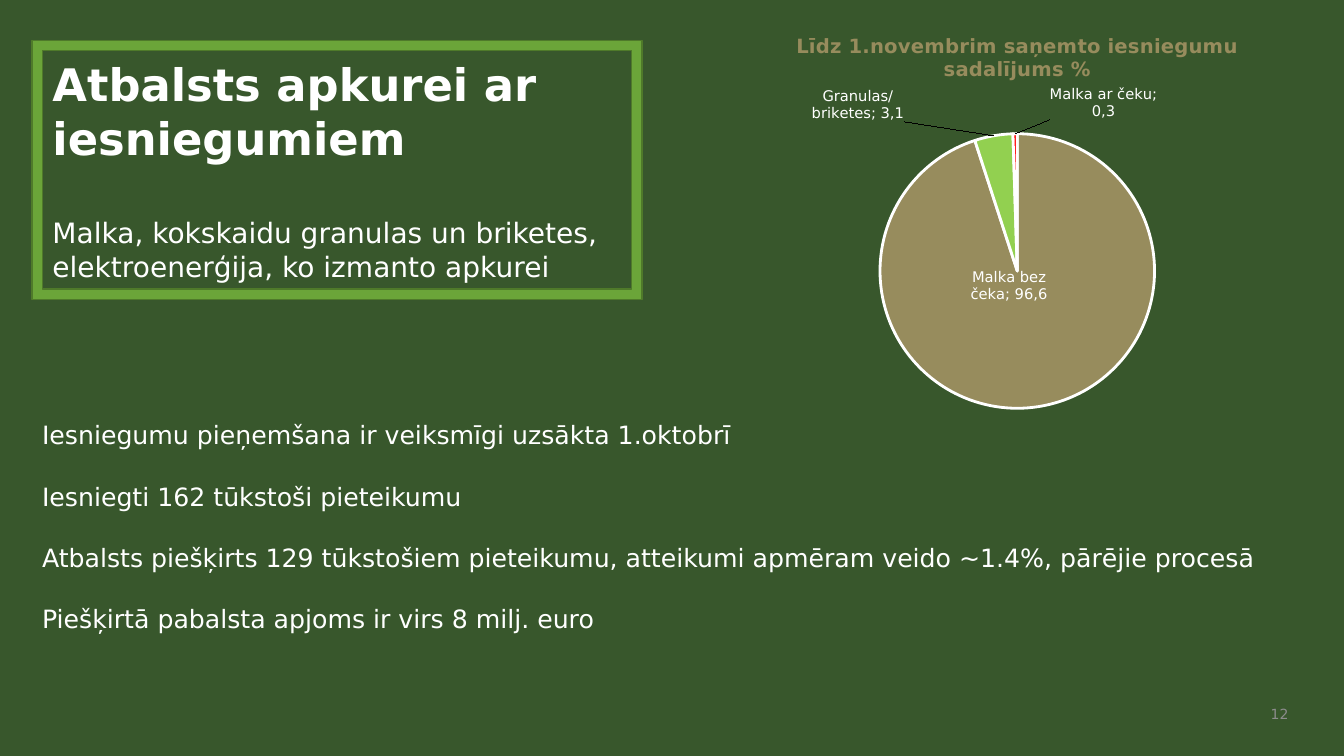
"""Build the heating support slide with its pie chart of applications."""
from lxml import etree
from pptx import Presentation
from pptx import util as u
from pptx.chart import data as cd
from pptx.dml.color import RGBColor
from pptx.enum import chart as ce, shapes, text

GREEN = RGBColor(0x38, 0x57, 0x2C)
FRAME = RGBColor(0x6B, 0xA5, 0x39)
EDGE = RGBColor(0x4F, 0x7A, 0x2A)
TAN = RGBColor(0x97, 0x8C, 0x5D)
LIME = RGBColor(0x92, 0xD0, 0x50)
RED = RGBColor(0xFF, 0, 0)
WHITE = RGBColor(0xFF, 0xFF, 0xFF)
GREY = RGBColor(0x8C, 0x8C, 0x8C)
C = "http://schemas.openxmlformats.org/drawingml/2006/chart"


def add_text(p, words, size, color, bold=False):
    r = p.add_run()
    r.text = words
    fmt = {"name": "DejaVu Sans", "size": u.Pt(size), "bold": bold}
    for key, value in fmt.items():
        setattr(r.font, key, value)
    r.font.color.rgb = color


def layout_xml(**values):
    items = "".join(f'<c:{k} val="{v}"/>' for k, v in values.items())
    return etree.fromstring(
        f'<c:layout xmlns:c="{C}"><c:manualLayout>{items}</c:manualLayout></c:layout>')


prs = Presentation()
prs.slide_width, prs.slide_height = u.Pt(960), u.Pt(540)
s = prs.slides.add_slide(prs.slide_layouts[6])
s.background.fill.solid()
s.background.fill.fore_color.rgb = GREEN

sp = s.shapes.add_shape(shapes.MSO_SHAPE.FRAME, u.Pt(23), u.Pt(28.8), u.Pt(435.6), u.Pt(185))
sp.adjustments[0] = 0.04
sp.shadow.inherit = False
sp.fill.solid()
sp.fill.fore_color.rgb = FRAME
sp.line.color.rgb = EDGE
sp.line.width = u.Pt(1)
tf = sp.text_frame
tf.word_wrap = True
tf.vertical_anchor = text.MSO_ANCHOR.MIDDLE
add_text(tf.paragraphs[0], "Atbalsts apkurei ar iesniegumiem", 32, WHITE, True)
p = tf.add_paragraph()
p.space_before = u.Pt(37)
add_text(p, "Malka, kokskaidu granulas un briketes, elektroenerģija, ko izmanto apkurei", 20, WHITE)
for p in tf.paragraphs:
    p.alignment = text.PP_ALIGN.LEFT

POINTS = [
    "Iesniegumu pieņemšana ir veiksmīgi uzsākta 1.oktobrī",
    "Iesniegti 162 tūkstoši pieteikumu",
    "Atbalsts piešķirts 129 tūkstošiem pieteikumu, atteikumi apmēram veido ~1.4%, pārējie procesā",
    "Piešķirtā pabalsta apjoms ir virs 8 milj. euro",
]
tf = s.shapes.add_textbox(u.Pt(23), u.Pt(296), u.Pt(916), u.Pt(223)).text_frame
tf.word_wrap = True
for i, words in enumerate(POINTS):
    p = tf.add_paragraph() if i else tf.paragraphs[0]
    p.space_before = u.Pt(22.3 if i else 0)
    add_text(p, words, 18, WHITE)

tf = s.shapes.add_textbox(u.Pt(895.7), u.Pt(498.2), u.Pt(31.7), u.Pt(23.8)).text_frame
tf.word_wrap = True
tf.vertical_anchor = text.MSO_ANCHOR.MIDDLE
tf.paragraphs[0].alignment = text.PP_ALIGN.RIGHT
add_text(tf.paragraphs[0], "12", 10, GREY)

SLICES = [
    ("Malka bez čeka", 95, "96,6", TAN, -0.03, -0.13, ce.XL_LABEL_POSITION.CENTER),
    ("Granulas/ briketes", 4.5, "3,1", LIME, -0.14, -0.02, ce.XL_LABEL_POSITION.BEST_FIT),
    ("Malka ar čeku", 0.5, "0,3", RED, 0.14, -0.02, ce.XL_LABEL_POSITION.BEST_FIT),
]
data = cd.CategoryChartData()
data.categories = [row[0] for row in SLICES]
data.add_series("Series 1", [row[1] for row in SLICES])
chart = s.shapes.add_chart(ce.XL_CHART_TYPE.PIE, u.Pt(501), u.Pt(10.8),
                           u.Pt(451.4), u.Pt(292.3), data).chart
chart.has_legend = False
chart.font.name = "DejaVu Sans"
chart.font.size = u.Pt(10)
chart.has_title = True
add_text(chart.chart_title.text_frame.paragraphs[0],
         "Līdz 1.novembrim saņemto iesniegumu sadalījums %", 14, TAN, True)
area = chart.plots[0]._element.getparent()
for old in area.findall(f"{{{C}}}layout"):
    area.remove(old)
area.insert(0, layout_xml(layoutTarget="inner", xMode="edge", yMode="edge",
                          x=0.087, y=0.29, w=0.826, h=0.671))

plot = chart.plots[0]
plot.vary_by_categories = True
series = plot.series[0]
labels = series.data_labels
for key in ("show_value", "show_category_name"):
    setattr(labels, key, True)
for i, (name, value, share, color, dx, dy, position) in enumerate(SLICES):
    point = series.points[i]
    point.format.fill.solid()
    point.format.fill.fore_color.rgb = color
    point.format.line.color.rgb = WHITE
    point.format.line.width = u.Pt(2)
    label = point.data_label
    add_text(label.text_frame.paragraphs[0], f"{name}; {share}", 10.5, WHITE)
    label.position = position
    node = labels._element.findall(f"{{{C}}}dLbl")[i]
    node.insert(1, layout_xml(x=dx, y=dy))

prs.save("out.pptx")
